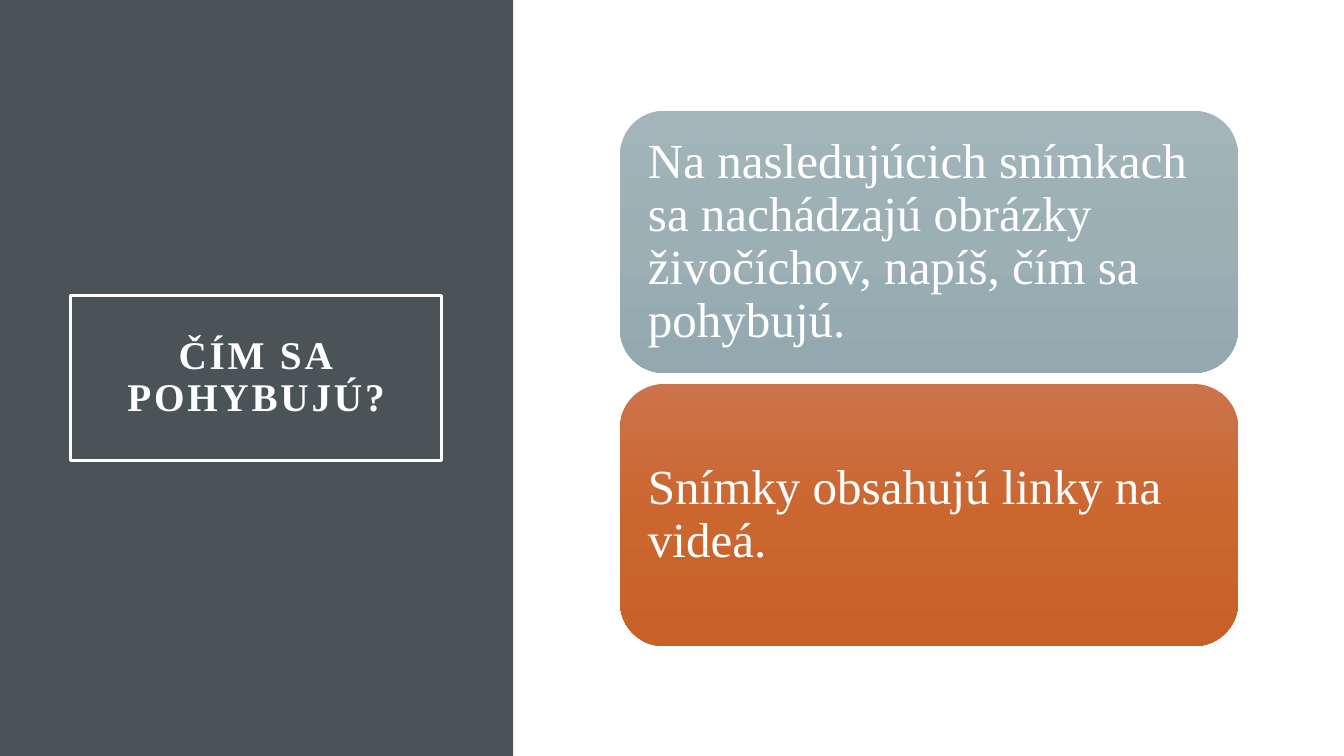
"""Builds a slide with a dark title panel and two rounded gradient cards."""
import copy
from dataclasses import dataclass

import pptx
import pptx.dml.color
import pptx.enum.shapes
import pptx.enum.text
import pptx.oxml.ns
import pptx.util

Inches = pptx.util.Inches
Pt = pptx.util.Pt
Shapes = pptx.enum.shapes.MSO_SHAPE
Align = pptx.enum.text.PP_ALIGN


@dataclass(frozen=True)
class Theme:
    font: str = "Times New Roman"
    panel: str = "4A5356"
    light: str = "FFFFFF"
    gray_gradient: tuple = ("A3B5BB", "9BAFB5", "93A9AF")
    orange_gradient: tuple = ("CC734B", "CB662F", "C86128")
    title_size: int = 28
    card_size: int = 35


THEME = Theme()


def rgb(value):
    return pptx.dml.color.RGBColor.from_string(value)


def add_plain_shape(slide, kind, left, top, width, height):
    shape = slide.shapes.add_shape(
        kind, Inches(left), Inches(top), Inches(width), Inches(height))
    shape.shadow.inherit = False
    shape.fill.background()
    shape.line.fill.background()
    return shape


def set_text(shape, text, size, alignment, inset, bold=False):
    frame = shape.text_frame
    frame.word_wrap = True
    frame.vertical_anchor = pptx.enum.text.MSO_ANCHOR.MIDDLE
    frame.margin_left = frame.margin_right = Inches(inset)
    frame.margin_top = frame.margin_bottom = Inches(inset)
    paragraph = frame.paragraphs[0]
    paragraph.text = text
    paragraph.alignment = alignment
    paragraph.line_spacing = 0.9
    paragraph.font.name = THEME.font
    paragraph.font.size = Pt(size)
    paragraph.font.bold = bold
    paragraph.font.color.rgb = rgb(THEME.light)
    return paragraph


def set_gradient(shape, colors):
    shape.fill.gradient()
    shape.fill.gradient_angle = 270
    stop_list = next(shape._element.iter(pptx.oxml.ns.qn("a:gsLst")))
    stop_list.insert(1, copy.deepcopy(stop_list[0]))
    for index, (stop, color) in enumerate(zip(shape.fill.gradient_stops, colors)):
        stop.position = index / (len(colors) - 1)
        stop.color.rgb = rgb(color)


def add_panel(slide):
    panel = add_plain_shape(slide, Shapes.RECTANGLE, 0, 0, 5.09, 7.5)
    panel.fill.solid()
    panel.fill.fore_color.rgb = rgb(THEME.panel)


def add_title(slide, text):
    title = add_plain_shape(slide, Shapes.RECTANGLE, 0.7, 2.93, 3.68, 1.64)
    title.line.color.rgb = rgb(THEME.light)
    title.line.width = Pt(2.5)
    paragraph = set_text(title, text, THEME.title_size, Align.CENTER, 0.2, bold=True)
    paragraph.runs[0].font._element.set("spc", "200")


def add_card(slide, top, text, colors):
    card = add_plain_shape(slide, Shapes.ROUNDED_RECTANGLE, 6.15, top, 6.13, 2.6)
    set_gradient(card, colors)
    set_text(card, text, THEME.card_size, Align.LEFT, 0.15)


def main():
    presentation = pptx.Presentation()
    presentation.slide_width = Inches(13.33)
    presentation.slide_height = Inches(7.5)
    slide = presentation.slides.add_slide(presentation.slide_layouts[6])
    add_panel(slide)
    add_title(slide, "ČÍM SA POHYBUJÚ?")
    cards = (
        ("Na nasledujúcich snímkach sa nachádzajú obrázky živočíchov, "
         "napíš, čím sa pohybujú.", THEME.gray_gradient),
        ("Snímky obsahujú linky na videá.", THEME.orange_gradient),
    )
    for index, (text, colors) in enumerate(cards):
        add_card(slide, 1.1 + index * 2.71, text, colors)
    presentation.save("out.pptx")


if __name__ == "__main__":
    main()
